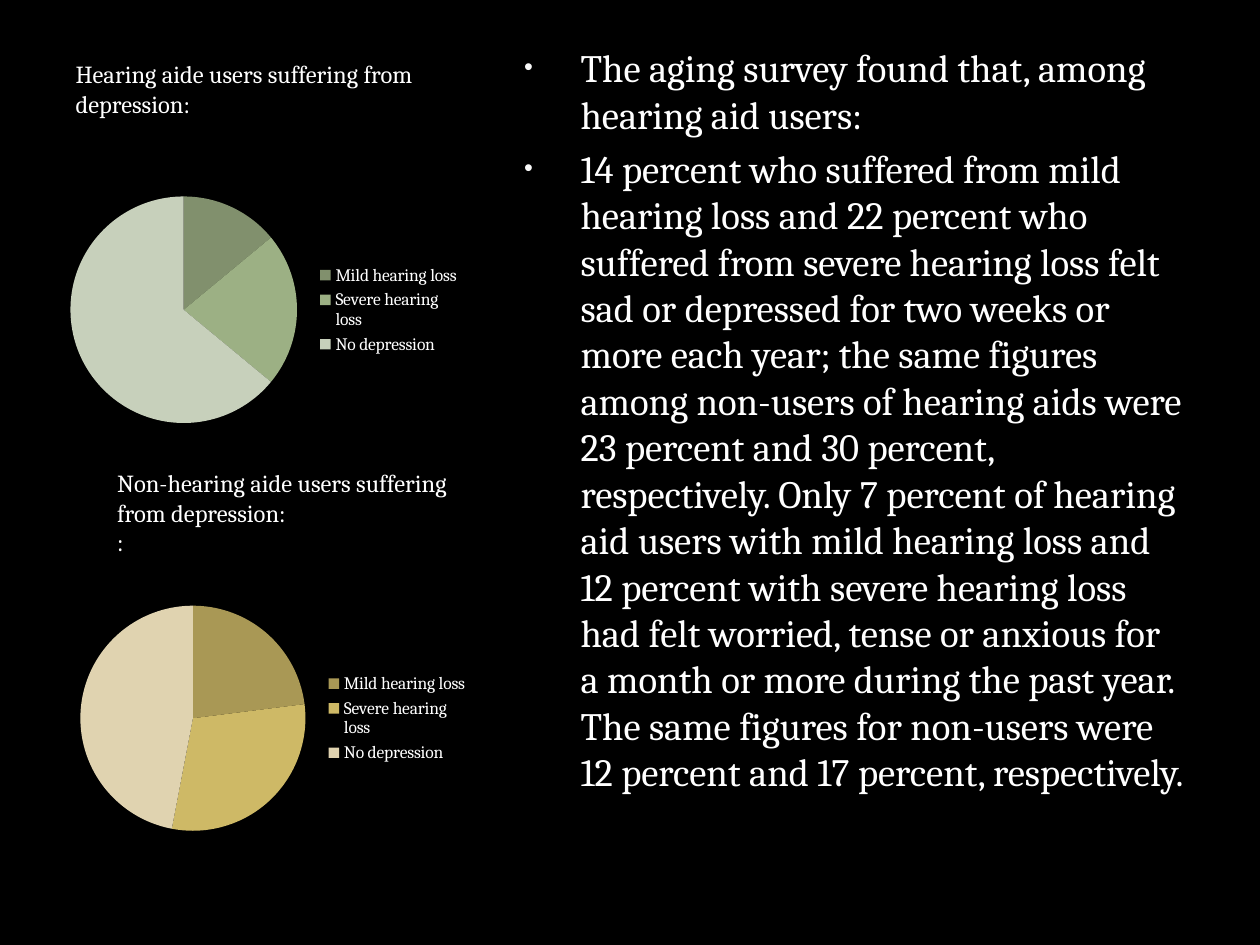
from lxml import etree
from pptx import Presentation
from pptx.chart.data import CategoryChartData
from pptx.dml.color import RGBColor
from pptx.enum import chart as ch, text
from pptx.oxml import ns
from pptx.util import Cm, Pt

BLACK = RGBColor(0, 0, 0)
WHITE = RGBColor(0xFF, 0xFF, 0xFF)
GREENS = [RGBColor.from_string(c) for c in ("81906D", "9CB084", "C7D0BB")]
GOLDS = [RGBColor.from_string(c) for c in ("A99855", "CEB966", "E0D3B0")]
BULLET = "F9F9F9"
FONT = "Cambria"

FINDINGS = [
    "The aging survey found that, among hearing aid users:",
    "14 percent who suffered from mild hearing loss and 22 percent who "
    "suffered from severe hearing loss felt sad or depressed for two weeks or "
    "more each year; the same figures among non-users of hearing aids were "
    "23 percent and 30 percent, respectively. Only 7 percent of hearing aid "
    "users with mild hearing loss and 12 percent with severe hearing loss had "
    "felt worried, tense or anxious for a month or more during the past year. "
    "The same figures for non-users were 12 percent and 17 percent, "
    "respectively.",
]
USERS_CAPTION = ["Hearing aide users suffering from depression:"]
NON_USERS_CAPTION = ["Non-hearing aide users suffering from depression:", ":"]
GROUPS = ["Mild hearing loss", "Severe hearing loss", "No depression"]
# values, slice colours, (left, top, width, height) in cm
PIES = [
    ([14, 22, 64], GREENS, (1.07, 2.97, 8.46, 6.55)),
    ([23, 30, 47], GOLDS, (1.27, 11.23, 8.43, 6.5)),
]


def place(shape, left, top, width, height):
    shape.left, shape.top = Cm(left), Cm(top)
    shape.width, shape.height = Cm(width), Cm(height)


def style(font, size):
    font.name, font.size, font.color.rgb = FONT, Pt(size), WHITE


def write(frame, lines, size, before=0):
    frame.word_wrap = True
    frame.auto_size = text.MSO_AUTO_SIZE.NONE
    frame.text = "\n".join(lines)
    for paragraph in frame.paragraphs:
        style(paragraph.font, size)
        paragraph.space_before = Pt(before)


def add_bullet(paragraph):
    """Give a paragraph a small hanging bullet."""
    props = paragraph._p.get_or_add_pPr()
    props.set("marL", str(Cm(1.52)))
    props.set("indent", str(Cm(-1.14)))
    colour = etree.Element(ns.qn("a:buClr"))
    etree.SubElement(colour, ns.qn("a:srgbClr"), val=BULLET)
    marks = [
        colour,
        etree.Element(ns.qn("a:buSzPct"), val="65000"),
        etree.Element(ns.qn("a:buFont"), typeface="Arial"),
        etree.Element(ns.qn("a:buChar"), char="•"),
    ]
    spacing = props.find(ns.qn("a:spcBef"))
    for mark in reversed(marks):
        spacing.addnext(mark)


def add_pie(slide, values, colours, box):
    data = CategoryChartData()
    data.categories = GROUPS
    data.add_series("Series 1", values)
    pie = slide.shapes.add_chart(
        ch.XL_CHART_TYPE.PIE, *(Cm(n) for n in box), data).chart
    style(pie.font, 10)
    pie.has_title = False
    pie.has_legend = True
    pie.legend.position = ch.XL_LEGEND_POSITION.RIGHT
    pie.legend.include_in_layout = False
    plot = pie.plots[0]
    plot.vary_by_categories = True
    for i, colour in enumerate(colours):
        fill = plot.series[0].points[i].format.fill
        fill.solid()
        fill.fore_color.rgb = colour


def main():
    deck = Presentation()
    deck.slide_width, deck.slide_height = Cm(25.4), Cm(19.05)
    slide = deck.slides.add_slide(deck.slide_layouts[7])
    slide.background.fill.solid()
    slide.background.fill.fore_color.rgb = BLACK

    title, findings, users = slide.placeholders
    title._element.getparent().remove(title._element)

    place(findings, 9.93, 0.76, 14.2, 16.26)
    write(findings.text_frame, FINDINGS, 22.1, before=4.4)
    for paragraph in findings.text_frame.paragraphs:
        add_bullet(paragraph)

    place(users, 1.27, 1.07, 8.69, 15.75)
    write(users.text_frame, USERS_CAPTION, 14, before=2.8)

    for values, colours, box in PIES:
        add_pie(slide, values, colours, box)

    non_users = slide.shapes.add_textbox(Cm(2.11), Cm(9.32), Cm(7.62), Cm(2.06))
    write(non_users.text_frame, NON_USERS_CAPTION, 14)

    deck.save("out.pptx")


if __name__ == "__main__":
    main()
